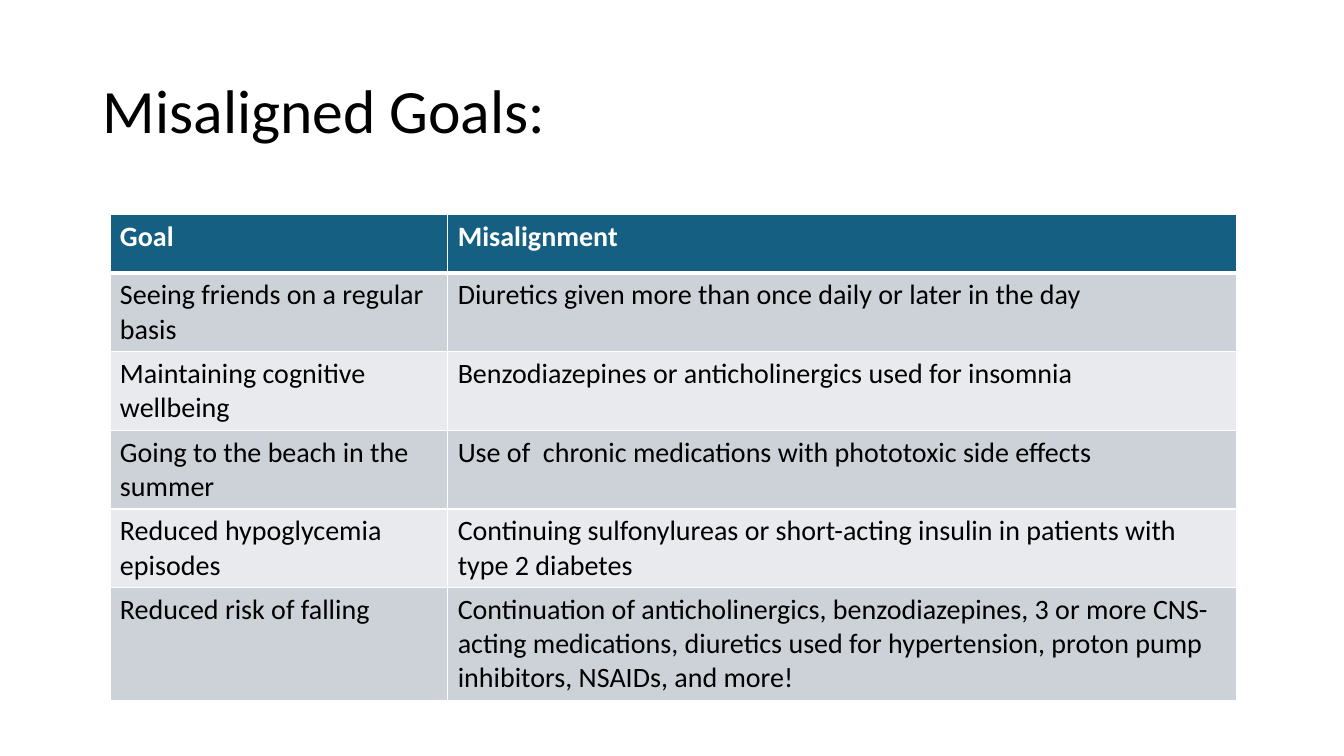
from dataclasses import dataclass

from lxml.etree import SubElement
from pptx import Presentation
from pptx.dml.color import RGBColor
from pptx.enum.text import MSO_ANCHOR
from pptx.oxml.ns import qn
from pptx.util import Inches, Pt


@dataclass(frozen=True)
class Theme:
    font: str = "Calibri"
    title_size: int = 44
    table_size: int = 20
    ink: str = "000000"
    paper: str = "FFFFFF"
    header: str = "156082"
    bands: tuple = ("CCD2D8", "E8EAED")
    thin: int = 1
    thick: int = 3


class SlideBuilder:
    def __init__(self, page, theme):
        self.page = page
        self.theme = theme

    def style(self, para, size, color, bold=False):
        for span in para.runs:
            span.font.name = self.theme.font
            span.font.size = Pt(size)
            span.font.bold = bold
            span.font.color.rgb = RGBColor.from_string(color)

    def title(self, text, left, top, width, height):
        box = self.page.shapes.add_textbox(
            Inches(left), Inches(top), Inches(width), Inches(height))
        frame = box.text_frame
        frame.word_wrap = True
        frame.vertical_anchor = MSO_ANCHOR.MIDDLE
        frame.text = text
        para = frame.paragraphs[0]
        para.line_spacing = 0.9
        self.style(para, self.theme.title_size, self.theme.ink)

    def borders(self, cell, top, bottom):
        properties = cell._tc.get_or_add_tcPr()
        thin = self.theme.thin
        for side, weight in zip("LRTB", (thin, thin, top, bottom)):
            line = SubElement(properties, qn(f"a:ln{side}"), w=str(Pt(weight)))
            fill = SubElement(line, qn("a:solidFill"))
            SubElement(fill, qn("a:srgbClr"), val=self.theme.paper)

    def table(self, rows, left, top, widths, heights):
        theme = self.theme
        frame = self.page.shapes.add_table(
            len(rows), len(widths), Inches(left), Inches(top),
            Inches(sum(widths)), Inches(sum(heights)))
        grid = frame.table
        for column, width in zip(grid.columns, widths):
            column.width = Inches(width)
        for index, (texts, height) in enumerate(zip(rows, heights)):
            grid.rows[index].height = Inches(height)
            heading = index == 0
            fill = theme.header if heading else theme.bands[(index - 1) % 2]
            for column, text in enumerate(texts):
                cell = grid.cell(index, column)
                self.borders(cell,
                             theme.thick if index == 1 else theme.thin,
                             theme.thick if heading else theme.thin)
                cell.fill.solid()
                cell.fill.fore_color.rgb = RGBColor.from_string(fill)
                cell.text_frame.text = text
                self.style(cell.text_frame.paragraphs[0], theme.table_size,
                           theme.paper if heading else theme.ink, heading)


GOALS = [
    ("Goal", "Misalignment"),
    ("Seeing friends on a regular basis",
     "Diuretics given more than once daily or later in the day"),
    ("Maintaining cognitive wellbeing",
     "Benzodiazepines or anticholinergics used for insomnia"),
    ("Going to the beach in the summer",
     "Use of  chronic medications with phototoxic side effects"),
    ("Reduced hypoglycemia episodes",
     "Continuing sulfonylureas or short-acting insulin in patients with "
     "type 2 diabetes"),
    ("Reduced risk of falling",
     "Continuation of anticholinergics, benzodiazepines, 3 or more CNS-acting "
     "medications, diuretics used for hypertension, proton pump inhibitors, "
     "NSAIDs, and more!"),
]


def main():
    deck = Presentation()
    deck.slide_width = Inches(13.33)
    deck.slide_height = Inches(7.5)
    page = deck.slides.add_slide(deck.slide_layouts[6])
    builder = SlideBuilder(page, Theme())
    builder.title("Misaligned Goals:", 0.92, 0.4, 11.5, 1.45)
    builder.table(GOALS, 1.09, 2.13, (3.35, 7.82), (0.58, *[0.78] * 4, 1.12))
    deck.save("out.pptx")


if __name__ == "__main__":
    main()
